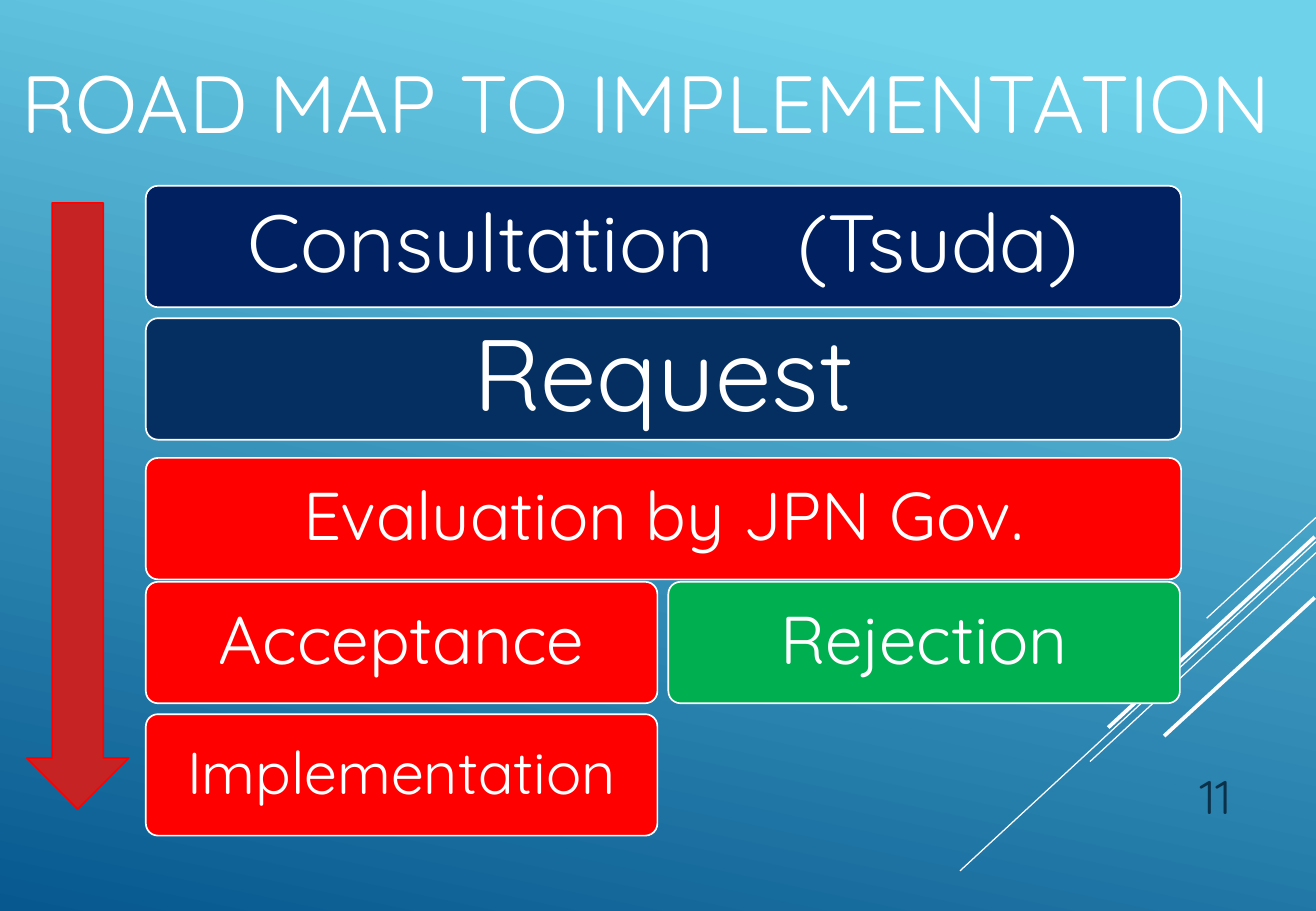
from lxml.etree import SubElement
from pptx import Presentation
from pptx.dml.color import RGBColor
from pptx.enum.shapes import MSO_CONNECTOR as Connector, MSO_SHAPE as Shape
from pptx.enum.text import MSO_ANCHOR as Anchor, PP_ALIGN as Align
from pptx.oxml.ns import qn
from pptx.util import Pt

PX = 9144
COLORS = {
    "white": "FFFFFF", "sky": "6ED2EB", "deep": "06588E",
    "navy": "002060", "ink": "052F61", "red": "FF0000",
    "green": "00B050", "crimson": "C62324", "number": "0A304A",
}


class RoadMapSlide:
    font_name = "Quicksand"

    def __init__(self, deck):
        self.slide = deck.slides.add_slide(deck.slide_layouts[6])

    def color(self, name):
        return RGBColor.from_string(COLORS[name])

    def background(self, start, end, angle):
        fill = self.slide.background.fill
        fill.gradient()
        fill.gradient_angle = angle
        for stop, name, position in zip(fill.gradient_stops, (start, end), (0.1, 1)):
            stop.color.rgb = self.color(name)
            stop.position = position

    def line(self, x1, y1, x2, y2, weight):
        streak = self.slide.shapes.add_connector(
            Connector.STRAIGHT, x1 * PX, y1 * PX, x2 * PX, y2 * PX)
        streak.line.color.rgb = self.color("white")
        streak.line.width = Pt(weight)
        SubElement(streak.element.spPr, qn("a:effectLst"))

    def style_run(self, run, size, color):
        run.font.name = self.font_name
        run.font.size = Pt(size)
        run.font.color.rgb = self.color(color)

    def fill_frame(self, frame, words, size, color, align, anchor):
        frame.word_wrap = True
        frame.vertical_anchor = anchor
        paragraph = frame.paragraphs[0]
        paragraph.text = words
        paragraph.alignment = align
        self.style_run(paragraph.runs[0], size, color)
        return paragraph

    def text(self, x, y, w, h, words, size, color, align, anchor):
        box = self.slide.shapes.add_textbox(x * PX, y * PX, w * PX, h * PX)
        self.fill_frame(box.text_frame, words, size, color, align, anchor)

    def shape(self, kind, x, y, w, h, fill, outline):
        figure = self.slide.shapes.add_shape(kind, x * PX, y * PX, w * PX, h * PX)
        figure.shadow.inherit = False
        figure.fill.solid()
        figure.fill.fore_color.rgb = self.color(fill)
        figure.line.color.rgb = self.color(outline)
        figure.line.width = Pt(1)
        return figure

    def step(self, x, y, w, words, size, fill):
        card = self.shape(Shape.ROUNDED_RECTANGLE, x, y, w, 100, fill, "white")
        card.adjustments[0] = 0.1
        paragraph = self.fill_frame(
            card.text_frame, words, size, "white", Align.CENTER, Anchor.MIDDLE)
        paragraph.line_spacing = 0.9
        return paragraph

    def widen_gap(self, paragraph, size, points):
        first, second = paragraph.text.split(" ")
        paragraph.runs[0].text = first
        for part in (" ", second):
            run = paragraph.add_run()
            run.text = part
            self.style_run(run, size, "white")
        paragraph.runs[1].font._element.set("spc", str(points * 100))


def main():
    deck = Presentation()
    deck.slide_width, deck.slide_height = 1083 * PX, 750 * PX
    road_map = RoadMapSlide(deck)
    road_map.background("sky", "deep", 258)

    for streak in (
        (1083, 426, 993, 509, 0.75),
        (1083, 446, 790, 717, 0.75),
        (1083, 455, 897, 627, 0.75),
        (1082, 442, 912, 599, 2.25),
        (1082, 492, 958, 606, 2.25),
    ):
        road_map.line(*streak)

    road_map.text(8, 0, 1073, 167, "ROAD MAP TO IMPLEMENTATION", 48, "white",
                  Align.LEFT, Anchor.MIDDLE)
    road_map.text(921, 610, 102, 73, "11", 28, "number", Align.RIGHT, Anchor.BOTTOM)

    left, right, full, half = 120, 550, 852, 421
    consultation = road_map.step(left, 153, full, "Consultation (Tsuda)", 48, "navy")
    road_map.widen_gap(consultation, 48, 36)
    for step in (
        (left, 262, full, "Request", 60, "ink"),
        (left, 377, full, "Evaluation by JPN Gov.", 40, "red"),
        (left, 479, half, "Acceptance", 40, "red"),
        (left, 588, half, "Implementation", 35, "red"),
        (right, 479, half, "Rejection", 40, "green"),
    ):
        road_map.step(*step)

    road_map.shape(Shape.DOWN_ARROW, 22, 167, 84, 499, "crimson", "red")
    deck.save("out.pptx")


if __name__ == "__main__":
    main()
